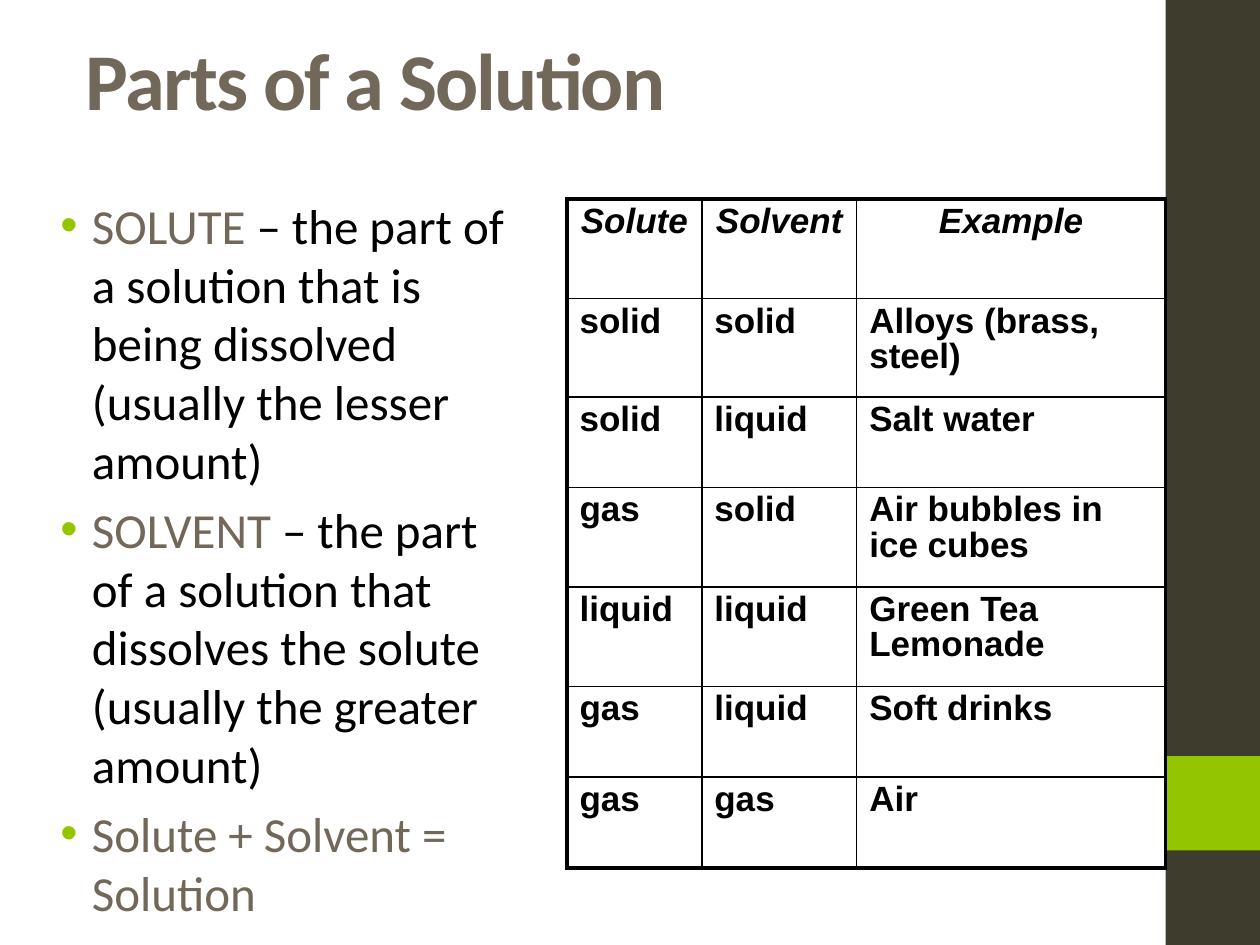
"""Build the Parts of a Solution slide."""
import dataclasses
import typing

import pptx
import pptx.dml.color
import pptx.enum.shapes
import pptx.enum.text
import pptx.oxml
import pptx.oxml.ns
import pptx.util

Inches = pptx.util.Inches
Pt = pptx.util.Pt


@dataclasses.dataclass(frozen=True)
class Theme:
    ink: str = "000000"
    taupe: str = "71685A"
    green: str = "94C600"
    dark: str = "3E3D2D"
    text_font: str = "Calibri"
    table_font: str = "Arial"
    title_size: float = 46
    body_size: float = 28
    table_size: float = 20
    inner_line: float = 1
    outer_line: float = 2.25


class Box(typing.NamedTuple):
    left: float
    top: float
    width: float
    height: float

    def lengths(self) -> list[int]:
        return [Inches(value) for value in self]


class Bar(typing.NamedTuple):
    box: Box
    color: str


class Point(typing.NamedTuple):
    term: str
    meaning: str = ""


class Pairing(typing.NamedTuple):
    solute: str
    solvent: str
    example: str


THEME = Theme()
BARS = [
    Bar(Box(9.25, 0, 0.75, 7.5), THEME.dark),
    Bar(Box(9.25, 6, 0.75, 0.75), THEME.green),
]
POINTS = [
    Point("SOLUTE ", "– the part of a solution that is being dissolved (usually the lesser amount)"),
    Point("SOLVENT ", "– the part of a solution that dissolves the solute (usually the greater amount)"),
    Point("Solute + Solvent = Solution"),
]
PAIRINGS = [
    Pairing("Solute", "Solvent", "Example"),
    Pairing("solid", "solid", "Alloys (brass, steel)"),
    Pairing("solid", "liquid", "Salt water"),
    Pairing("gas", "solid", "Air bubbles in ice cubes"),
    Pairing("liquid", "liquid", "Green Tea Lemonade"),
    Pairing("gas", "liquid", "Soft drinks"),
    Pairing("gas", "gas", "Air"),
]
TABLE_BOX = Box(4.5, 1.58, 4.75, 5.31)
COLUMN_WIDTHS = [1.07, 1.23, 2.45]
ROW_HEIGHTS = [0.79, 0.78, 0.72, 0.79, 0.79, 0.72, 0.72]


def add_run(paragraph, text: str, font: str, size: float, color: str,
            bold: bool = False, italic: bool = False):
    run = paragraph.add_run()
    run.text = text
    run.font.name = font
    run.font.size = Pt(size)
    run.font.bold = bold
    run.font.italic = italic
    run.font.color.rgb = pptx.dml.color.RGBColor.from_string(color)
    return run


def place(placeholder, box: Box, anchor):
    placeholder.left, placeholder.top, placeholder.width, placeholder.height = box.lengths()
    frame = placeholder.text_frame
    frame.word_wrap = True
    frame.auto_size = pptx.enum.text.MSO_AUTO_SIZE.NONE
    frame.vertical_anchor = anchor
    return frame


def add_bar(slide, bar: Bar) -> None:
    shape = slide.shapes.add_shape(pptx.enum.shapes.MSO_SHAPE.RECTANGLE, *bar.box.lengths())
    shape.shadow.inherit = False
    shape.fill.solid()
    shape.fill.fore_color.rgb = pptx.dml.color.RGBColor.from_string(bar.color)
    shape.line.fill.background()


def fill_title(slide) -> None:
    frame = place(slide.shapes.title, Box(0.58, 0, 8.33, 1.25), pptx.enum.text.MSO_ANCHOR.MIDDLE)
    paragraph = frame.paragraphs[0]
    paragraph.alignment = pptx.enum.text.PP_ALIGN.LEFT
    run = add_run(paragraph, "Parts of a Solution", THEME.text_font, THEME.title_size,
                  THEME.taupe, bold=True)
    run.font._element.set("spc", "-100")


def set_bullet(paragraph) -> None:
    properties = paragraph._p.get_or_add_pPr()
    properties.set("marL", str(Inches(0.38)))
    properties.set("indent", str(Inches(-0.25)))
    namespace = pptx.oxml.ns.nsdecls("a")
    for markup in (
        f'<a:buClr {namespace}><a:srgbClr val="{THEME.green}"/></a:buClr>',
        f'<a:buFont {namespace} typeface="{THEME.table_font}"/>',
        f'<a:buChar {namespace} char="•"/>',
    ):
        properties.append(pptx.oxml.parse_xml(markup))


def fill_points(slide) -> None:
    frame = place(slide.placeholders[1], Box(0.25, 1.5, 3.92, 5.33), pptx.enum.text.MSO_ANCHOR.TOP)
    for index, point in enumerate(POINTS):
        paragraph = frame.add_paragraph() if index else frame.paragraphs[0]
        paragraph.space_before = Pt(THEME.body_size * 0.2)
        set_bullet(paragraph)
        add_run(paragraph, point.term, THEME.text_font, THEME.body_size, THEME.taupe)
        if point.meaning:
            add_run(paragraph, point.meaning, THEME.text_font, THEME.body_size, THEME.ink)


def set_borders(cell, outer_sides: dict[str, bool]) -> None:
    properties = cell._tc.get_or_add_tcPr()
    for side, is_outer in outer_sides.items():
        width = Pt(THEME.outer_line if is_outer else THEME.inner_line)
        properties.append(pptx.oxml.parse_xml(
            f'<a:ln{side} {pptx.oxml.ns.nsdecls("a")} w="{width}"><a:solidFill>'
            f'<a:srgbClr val="{THEME.ink}"/></a:solidFill></a:ln{side}>'))


def add_pairings(slide) -> None:
    last_row, last_column = len(PAIRINGS) - 1, len(COLUMN_WIDTHS) - 1
    table = slide.shapes.add_table(len(PAIRINGS), len(COLUMN_WIDTHS), *TABLE_BOX.lengths()).table
    table.first_row = table.horz_banding = False
    for column, width in zip(table.columns, COLUMN_WIDTHS):
        column.width = Inches(width)
    for row_index, pairing in enumerate(PAIRINGS):
        table.rows[row_index].height = Inches(ROW_HEIGHTS[row_index])
        is_header = row_index == 0
        for column_index, text in enumerate(pairing):
            cell = table.cell(row_index, column_index)
            set_borders(cell, {"L": column_index == 0, "R": column_index == last_column,
                               "T": is_header, "B": row_index == last_row})
            cell.fill.background()
            paragraph = cell.text_frame.paragraphs[0]
            paragraph.line_spacing = 0.9
            paragraph.space_before = Pt(THEME.table_size * 0.3)
            if is_header:
                paragraph.alignment = pptx.enum.text.PP_ALIGN.CENTER
            add_run(paragraph, text, THEME.table_font, THEME.table_size, THEME.ink,
                    bold=True, italic=is_header)


def main() -> None:
    presentation = pptx.Presentation()
    presentation.slide_width, presentation.slide_height = Inches(10), Inches(7.5)
    slide = presentation.slides.add_slide(presentation.slide_layouts[1])
    for bar in BARS:
        add_bar(slide, bar)
    fill_title(slide)
    fill_points(slide)
    add_pairings(slide)
    presentation.save("out.pptx")


if __name__ == "__main__":
    main()
